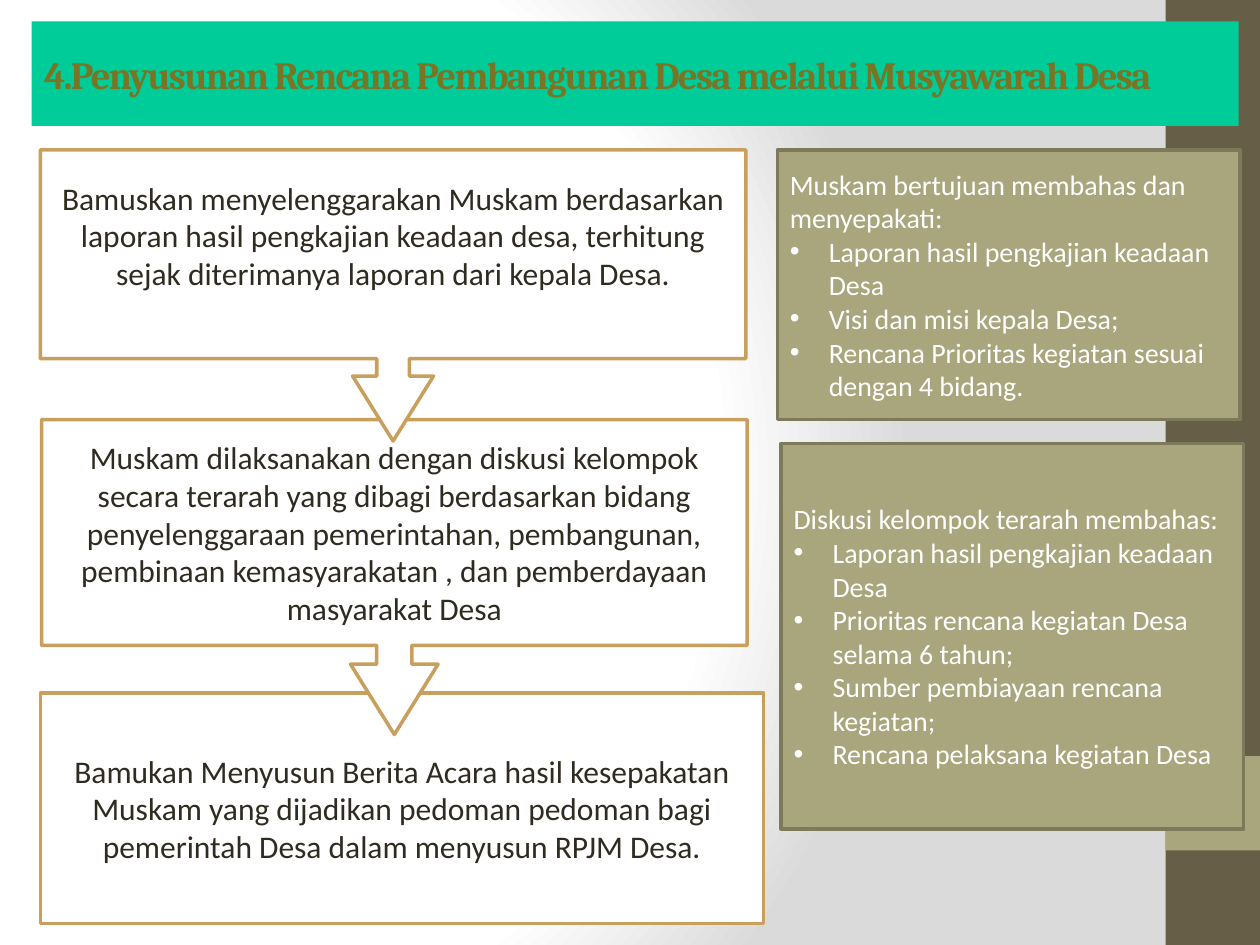
from dataclasses import dataclass

from lxml.etree import SubElement
from pptx import Presentation
from pptx.dml.color import RGBColor
from pptx.enum.shapes import MSO_SHAPE as Shape
from pptx.enum.text import MSO_ANCHOR as Anchor, MSO_AUTO_SIZE as AutoSize, PP_ALIGN as Align
from pptx.oxml import parse_xml
from pptx.oxml.ns import nsdecls, qn
from pptx.util import Inches, Pt


@dataclass(frozen=True)
class Theme:
    heading_font: str = "Cambria"
    body_font: str = "Calibri"
    title_size: int = 22
    step_size: int = 18
    list_size: int = 16
    line_width: int = 2
    white: str = "FFFFFF"
    grey: str = "DADADA"
    brown: str = "675E47"
    olive: str = "A9A57C"
    olive_line: str = "7D7A5C"
    green: str = "00CC99"
    title_text: str = "7A7425"
    gold: str = "C89F5D"
    dark_text: str = "2F2B20"


THEME = Theme()

TITLE = "4.Penyusunan Rencana Pembangunan Desa melalui Musyawarah Desa"
TITLE_AREA = (0.25, 0.17, 9.58, 0.83)

BANDS = [
    ((9.25, 0, 0.75, 7.5), THEME.brown),
    ((9.25, 6, 0.75, 0.75), THEME.olive),
]

CALLOUT_ADJUSTMENTS = (0.112, 0.139, 0.223, 0.717)
STEPS = [
    (Shape.FLOWCHART_PROCESS, (0.32, 5.5, 5.74, 1.83), 0.05,
     "Bamukan Menyusun Berita Acara hasil kesepakatan Muskam yang dijadikan "
     "pedoman pedoman bagi pemerintah Desa dalam menyusun RPJM Desa."),
    (Shape.DOWN_ARROW_CALLOUT, (0.33, 3.33, 5.6, 2.5), 0.05,
     "Muskam dilaksanakan dengan diskusi kelompok secara terarah yang dibagi "
     "berdasarkan bidang penyelenggaraan pemerintahan, pembangunan, pembinaan "
     "kemasyarakatan , dan pemberdayaan masyarakat Desa"),
    (Shape.DOWN_ARROW_CALLOUT, (0.32, 1.19, 5.6, 2.31), 0.35,
     "Bamuskan menyelenggarakan Muskam berdasarkan laporan hasil pengkajian "
     "keadaan desa, terhitung sejak diterimanya laporan dari kepala Desa."),
]

PANELS = [
    ((6.17, 1.19, 3.67, 2.14), "Muskam bertujuan membahas dan menyepakati:", [
        "Laporan hasil pengkajian keadaan Desa",
        "Visi dan misi kepala Desa;",
        "Rencana Prioritas kegiatan sesuai dengan 4 bidang.",
    ]),
    ((6.2, 3.52, 3.67, 3.06), "Diskusi kelompok terarah membahas:", [
        "Laporan hasil pengkajian keadaan Desa",
        "Prioritas rencana kegiatan Desa selama 6 tahun;",
        "Sumber pembiayaan rencana kegiatan;",
        "Rencana pelaksana kegiatan Desa",
    ]),
]
BULLET_INDENT = Inches(0.31)


def color(value):
    return RGBColor.from_string(value)


def paint_background(slide):
    slide.background.fill.gradient()
    old = slide.element.find(".//" + qn("a:gradFill"))
    stops = "".join(
        f'<a:gs pos="{position * 1000}"><a:srgbClr val="{value}"/></a:gs>'
        for position, value in [(0, THEME.white), (75, THEME.white), (100, THEME.grey)]
    )
    old.getparent().replace(old, parse_xml(
        f'<a:gradFill {nsdecls("a")} rotWithShape="1"><a:gsLst>{stops}</a:gsLst>'
        '<a:path path="circle"><a:fillToRect l="20000" t="50000" r="100000" b="50000"/>'
        '</a:path></a:gradFill>'))


def add_box(slide, kind, area, fill, line=None):
    box = slide.shapes.add_shape(kind, *map(Inches, area))
    box.shadow.inherit = False
    box.fill.solid()
    box.fill.fore_color.rgb = color(fill)
    if line:
        box.line.color.rgb = color(line)
        box.line.width = Pt(THEME.line_width)
    else:
        box.line.fill.background()
    box.text_frame.word_wrap = True
    box.text_frame.vertical_anchor = Anchor.MIDDLE
    return box


def style_para(para, align, font, size, text_color, bold=False):
    para.alignment = align
    for span in para.runs:
        span.font.name = font
        span.font.size = Pt(size)
        span.font.bold = bold
        span.font.color.rgb = color(text_color)


def add_bullet(para):
    properties = para._p.get_or_add_pPr()
    properties.set("marL", str(BULLET_INDENT))
    properties.set("indent", str(-BULLET_INDENT))
    SubElement(properties, qn("a:buFont")).set("typeface", "Arial")
    SubElement(properties, qn("a:buChar")).set("char", "•")


def add_title(slide):
    title = slide.shapes.title
    title.left, title.top, title.width, title.height = map(Inches, TITLE_AREA)
    title.fill.solid()
    title.fill.fore_color.rgb = color(THEME.green)
    frame = title.text_frame
    frame.text = TITLE
    frame.word_wrap = True
    frame.auto_size = AutoSize.NONE
    frame.vertical_anchor = Anchor.MIDDLE
    para = frame.paragraphs[0]
    style_para(para, Align.LEFT, THEME.heading_font, THEME.title_size, THEME.title_text, True)
    para.runs[0].font._element.set("spc", "-100")
    slide.shapes.element.append(title.element)


def add_step(slide, kind, area, bottom_margin, text):
    box = add_box(slide, kind, area, THEME.white, THEME.gold)
    if kind == Shape.DOWN_ARROW_CALLOUT:
        for index, value in enumerate(CALLOUT_ADJUSTMENTS):
            box.adjustments[index] = value
    frame = box.text_frame
    frame.margin_bottom = Inches(bottom_margin)
    frame.text = text
    style_para(frame.paragraphs[0], Align.CENTER, THEME.body_font, THEME.step_size, THEME.dark_text)


def add_panel(slide, area, heading, items):
    frame = add_box(slide, Shape.RECTANGLE, area, THEME.olive, THEME.olive_line).text_frame
    frame.text = "\n".join([heading, *items])
    for para in frame.paragraphs[1:]:
        add_bullet(para)
    for para in frame.paragraphs:
        style_para(para, Align.LEFT, THEME.body_font, THEME.list_size, THEME.white)


def main():
    deck = Presentation()
    deck.slide_width, deck.slide_height = Inches(10), Inches(7.5)
    page = deck.slides.add_slide(deck.slide_layouts[5])
    paint_background(page)
    for area, fill in BANDS:
        add_box(page, Shape.RECTANGLE, area, fill)
    add_title(page)
    for step in STEPS:
        add_step(page, *step)
    for panel in PANELS:
        add_panel(page, *panel)
    deck.save("out.pptx")


if __name__ == "__main__":
    main()
